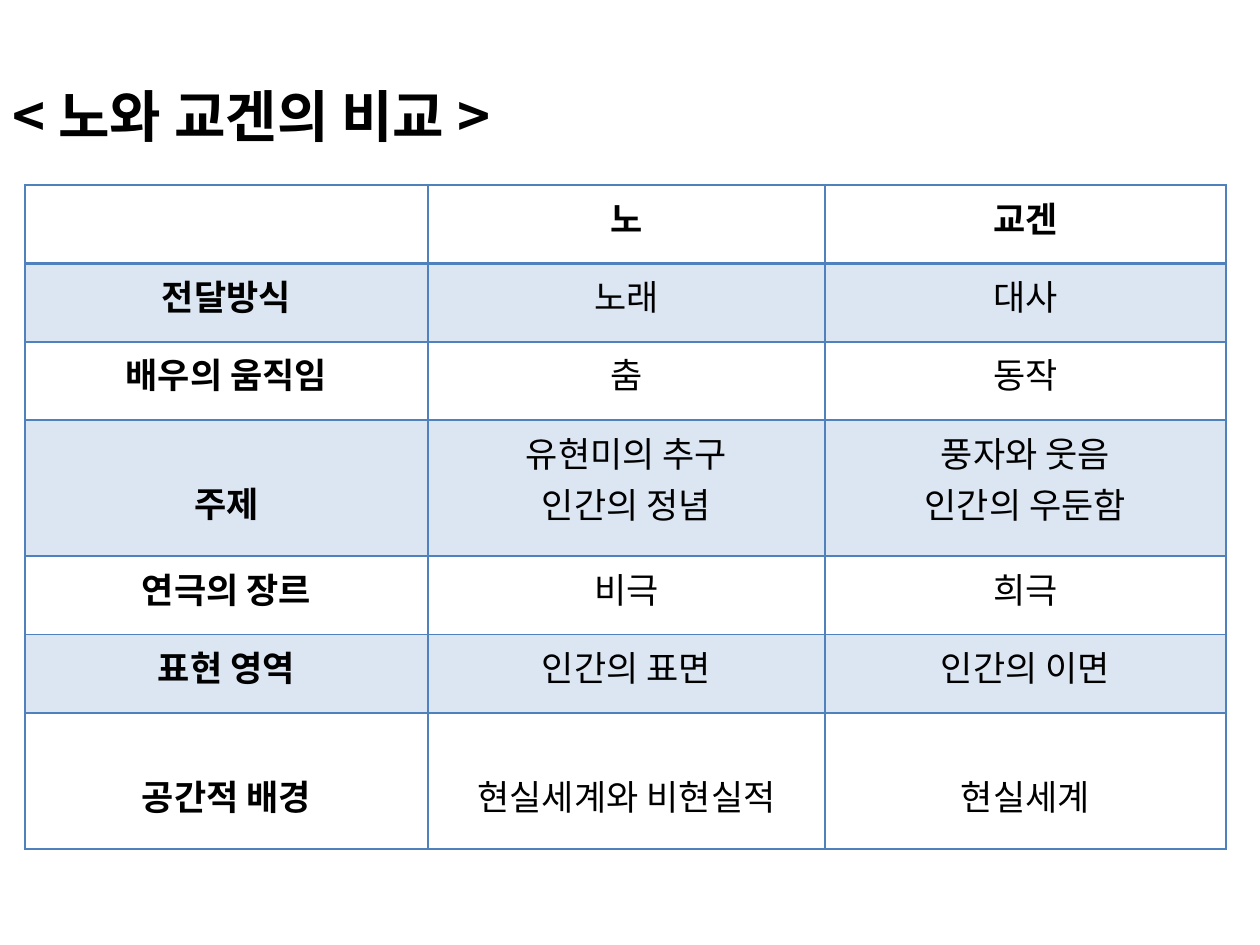
"""Build a slide that compares Noh and Kyogen in a table."""
from dataclasses import dataclass

import lxml.etree
import pptx
import pptx.dml.color
import pptx.enum.text
import pptx.oxml.ns
import pptx.util

Cm = pptx.util.Cm
Pt = pptx.util.Pt
ALIGN = pptx.enum.text.PP_ALIGN
ANCHOR = pptx.enum.text.MSO_ANCHOR


@dataclass(frozen=True)
class Theme:
    font: str = "Noto Sans CJK KR"
    ink: str = "000000"
    border: str = "4F81BD"
    band: str = "DCE6F2"
    title_size: int = 32
    table_size: int = 20
    thin: int = 1
    thick: int = 2


THEME = Theme()
COLUMN_WIDTHS = (8.13, 8, 8.08)
SHORT_ROW, TALL_ROW = 1.58, 2.74
CELL_MARGIN, LOWERED_MARGIN = 0.13, 1.15
ROWS = (
    ("", "노", "교겐"),
    ("전달방식", "노래", "대사"),
    ("배우의 움직임", "춤", "동작"),
    ("주제", "유현미의 추구\n인간의 정념", "풍자와 웃음\n인간의 우둔함"),
    ("연극의 장르", "비극", "희극"),
    ("표현 영역", "인간의 표면", "인간의 이면"),
    ("공간적 배경", "현실세계와 비현실적", "현실세계"),
)
TALL_ROWS = (3, 6)


def write_text(frame, text, size, bold=False, align=ALIGN.CENTER):
    """Fill a text frame with one formatted paragraph per line."""
    frame.text = text
    for paragraph in frame.paragraphs:
        paragraph.alignment = align
        paragraph.font.size = Pt(size)
        for run in paragraph.runs:
            run.font.size = Pt(size)
            run.font.bold = bold
            run.font.name = THEME.font
            run.font.color.rgb = pptx.dml.color.RGBColor.from_string(THEME.ink)
            east_asian = pptx.oxml.ns.qn("a:ea")
            properties = run._r.get_or_add_rPr()
            lxml.etree.SubElement(properties, east_asian, typeface=THEME.font)


def set_borders(cell, top, bottom):
    """Draw the four borders of a cell with the given top and bottom widths."""
    qn = pptx.oxml.ns.qn
    properties = cell._tc.get_or_add_tcPr()
    widths = {"L": THEME.thin, "R": THEME.thin, "T": top, "B": bottom}
    for index, (side, width) in enumerate(widths.items()):
        line = lxml.etree.Element(qn(f"a:ln{side}"), w=str(Pt(width)))
        fill = lxml.etree.SubElement(line, qn("a:solidFill"))
        lxml.etree.SubElement(fill, qn("a:srgbClr"), val=THEME.border)
        properties.insert(index, line)


def add_title(slide, text):
    """Place and format the title."""
    title = slide.shapes.title
    title.left, title.top = Cm(0), Cm(1.22)
    title.width, title.height = Cm(25.4), Cm(2.2)
    title.text_frame.vertical_anchor = ANCHOR.MIDDLE
    write_text(title.text_frame, text, THEME.title_size, bold=True, align=ALIGN.LEFT)


def format_cell(cell, row, column):
    """Write and style one cell of the comparison."""
    text = ROWS[row][column]
    lowered = row in TALL_ROWS and "\n" not in text
    cell.margin_top = Cm(LOWERED_MARGIN if lowered else CELL_MARGIN)
    cell.vertical_anchor = ANCHOR.TOP
    write_text(cell.text_frame, text, THEME.table_size, bold=row == 0 or column == 0)
    if row % 2:
        cell.fill.solid()
        cell.fill.fore_color.rgb = pptx.dml.color.RGBColor.from_string(THEME.band)
    else:
        cell.fill.background()
    set_borders(
        cell,
        top=THEME.thick if row == 1 else THEME.thin,
        bottom=THEME.thick if row == 0 else THEME.thin,
    )


def add_comparison(slide):
    """Add the comparison table."""
    heights = [TALL_ROW if row in TALL_ROWS else SHORT_ROW for row in range(len(ROWS))]
    table = slide.shapes.add_table(
        len(ROWS), len(COLUMN_WIDTHS), Cm(0.5), Cm(3.73),
        Cm(sum(COLUMN_WIDTHS)), Cm(sum(heights)),
    ).table
    table.first_row = table.horz_banding = False
    for column, width in zip(table.columns, COLUMN_WIDTHS):
        column.width = Cm(width)
    for row, height in enumerate(heights):
        table.rows[row].height = Cm(height)
        for column in range(len(COLUMN_WIDTHS)):
            format_cell(table.cell(row, column), row, column)


def main():
    """Build and save the presentation."""
    presentation = pptx.Presentation()
    presentation.slide_width, presentation.slide_height = Cm(25.4), Cm(19.05)
    slide = presentation.slides.add_slide(presentation.slide_layouts[5])
    add_title(slide, "< 노와 교겐의 비교 >")
    add_comparison(slide)
    presentation.save("out.pptx")


if __name__ == "__main__":
    main()
